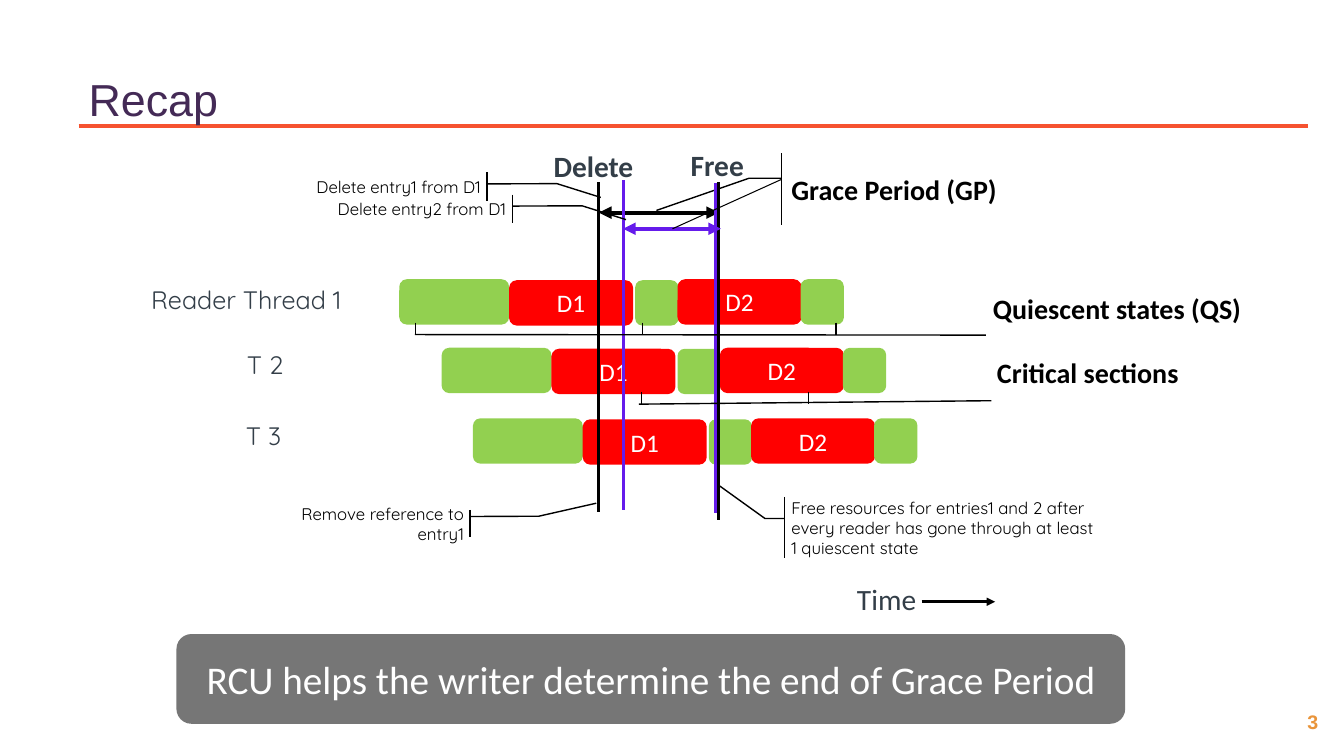
"""Build the RCU recap slide: reader timelines, grace periods and callouts."""
from dataclasses import dataclass

from lxml import etree
from pptx import Presentation
from pptx import util as u
from pptx.dml.color import RGBColor
from pptx.enum import shapes, text
from pptx.oxml.ns import qn

PX = 9144
KIND = shapes.MSO_SHAPE
AL = text.PP_ALIGN


@dataclass(frozen=True)
class Theme:
    black: str = "000000"
    white: str = "FFFFFF"
    slate: str = "333E48"
    plum: str = "442A56"
    rule: str = "F65230"
    number: str = "E9943A"
    quiet: str = "92D050"
    critical: str = "FF0000"
    violet: str = "651BEB"
    banner: str = "767676"
    head: str = "Arial"
    body: str = "Calibri"
    hand: str = "Quicksand"
    title: int = 32
    message: int = 28
    label: int = 21
    state: int = 20
    block: int = 18
    page: int = 14
    note: int = 12


T = Theme()


def px(*lengths):
    return [u.Emu(n * PX) for n in lengths]


def write(sp, words, font, size, color, bold=False, align=AL.LEFT, middle=True):
    tf = sp.text_frame
    tf.word_wrap = True
    tf.vertical_anchor = text.MSO_ANCHOR.MIDDLE if middle else text.MSO_ANCHOR.TOP
    p = tf.paragraphs[0]
    p.alignment = align
    r = p.add_run()
    r.text = words
    r.font.name, r.font.size, r.font.bold = font, u.Pt(size), bold
    r.font.color.rgb = RGBColor.from_string(color)
    return tf


def textbox(s, box, words, font, size, color, **style):
    return write(s.shapes.add_textbox(*px(*box)), words, font, size, color, **style)


def label(s, box, words, font=T.body, size=T.label, bold=False):
    tf = textbox(s, box, words, font, size, T.slate, bold=bold, middle=False)
    tf.margin_left = tf.margin_right = tf.margin_top = tf.margin_bottom = 0
    tf.paragraphs[0].line_spacing = 0.9


def block(s, box, color, words="", size=T.block):
    sp = s.shapes.add_shape(KIND.ROUNDED_RECTANGLE, *px(*box))
    sp.shadow.inherit = False
    sp.fill.solid()
    sp.fill.fore_color.rgb = RGBColor.from_string(color)
    sp.line.fill.background()
    if words:
        write(sp, words, T.body, size, T.white, align=AL.CENTER)


def line(s, x1, y1, x2, y2, color=T.black, width=1, ends=()):
    sp = s.shapes.add_connector(shapes.MSO_CONNECTOR.STRAIGHT, *px(x1, y1, x2, y2))
    sp.line.color.rgb = RGBColor.from_string(color)
    sp.line.width = u.Pt(width)
    ln = sp.line._get_or_add_ln()
    for end in ends:
        etree.SubElement(ln, qn(f"a:{end}"), type="triangle")
    etree.SubElement(sp._element.spPr, qn("a:effectLst"))


def callout(s, kind, box, adjust, words, font=T.hand, size=T.note, **style):
    sp = s.shapes.add_shape(kind, *px(*box))
    sp.shadow.inherit = False
    sp.fill.background()
    sp.line.color.rgb = RGBColor.from_string(T.black)
    sp.line.width = u.Pt(1)
    for i, value in enumerate(adjust):
        sp.adjustments[i] = value
    write(sp, words, font, size, T.black, **style)


def reader(s, x, y, name, name_x, name_y):
    label(s, (name_x, name_y, 210, 27), name, T.hand, T.block)
    spans = [(0, 0, 109, ""), (109, 1, 123, "D1"), (234, 1, 43, ""),
             (276, 0, 123, "D2"), (398, 0, 43, "")]
    for dx, dy, w, words in spans:
        block(s, (x + dx, y + dy, w, 45), T.critical if words else T.quiet, words)


def main():
    prs = Presentation()
    prs.slide_width, prs.slide_height = px(1333, 750)
    s = prs.slides.add_slide(prs.slide_layouts[6])
    accent, plain = KIND.LINE_CALLOUT_2_ACCENT_BAR, KIND.LINE_CALLOUT_1_NO_BORDER
    both = ("headEnd", "tailEnd")

    textbox(s, (1271, 699, 62, 34), "3", T.head, T.page, T.number,
            bold=True, align=AL.CENTER, middle=False)
    line(s, 78, 125, 1297, 125, T.rule, 2.25)
    textbox(s, (78, 59, 864, 77), "Recap", T.head, T.title, T.plum)

    reader(s, 396, 277, "Reader Thread 1", 150, 285)
    reader(s, 438, 345, "T 2", 245, 350)
    reader(s, 469, 415, "T 3", 244, 420)
    line(s, 914, 597, 987, 597, width=2, ends=("tailEnd",))
    label(s, (850, 580, 73, 32), "Time")

    callout(s, accent, (286, 506, 184, 27), (0.24, 0.98, 0.23, 1.35, -0.25, 1.66),
            "Remove reference to entry1", align=AL.RIGHT)
    line(s, 594, 181, 594, 508, width=2.25)
    label(s, (549, 151, 87, 32), "Delete", bold=True)
    callout(s, accent, (775, 493, 327, 61), (0.35, 0.01, 0.35, -0.05, -0.19, -0.19),
            "Free resources for entries1 and 2 after every reader has gone "
            "through at least 1 quiescent state")
    line(s, 713, 181, 713, 516, width=2.25)
    label(s, (685, 150, 56, 32), "Free", bold=True)

    line(s, 594, 211, 713, 211, width=3, ends=both)
    callout(s, accent, (775, 152, 248, 71), (0.35, 0, 0.35, -0.13, 0.8, -0.5),
            "Grace Period (GP)", T.body, T.state, bold=True)
    line(s, 618, 179, 618, 506, T.violet, 2.25)
    for i, (x, y) in enumerate([(289, 171), (314, 193)], 1):
        callout(s, accent, (x, y, 198, 28), (0.41, 0.98, 0.4, 1.33, 0.89, 1.55),
                f"Delete entry{i} from D1", align=AL.RIGHT)
    line(s, 618, 227, 715, 227, T.violet, 3, both)
    line(s, 710, 182, 710, 509, T.violet, 2.25)
    line(s, 667, 227, 775, 178, width=0.75)

    callout(s, plain, (979, 335, 220, 68), (0.92, 0.02, 0.97, -1.57),
            "Critical sections", T.body, T.state, bold=True)
    callout(s, plain, (975, 278, 271, 55), (0.99, 0.01, 0.98, -2.08),
            "Quiescent states (QS)", T.body, T.state, bold=True)
    for x, y in [(636, 389), (802, 389), (412, 320), (637, 320), (829, 320)]:
        line(s, x, y, x, y + 12)

    block(s, (175, 629, 941, 89), T.banner,
          "RCU helps the writer determine the end of Grace Period", T.message)
    prs.save("out.pptx")


if __name__ == "__main__":
    main()
